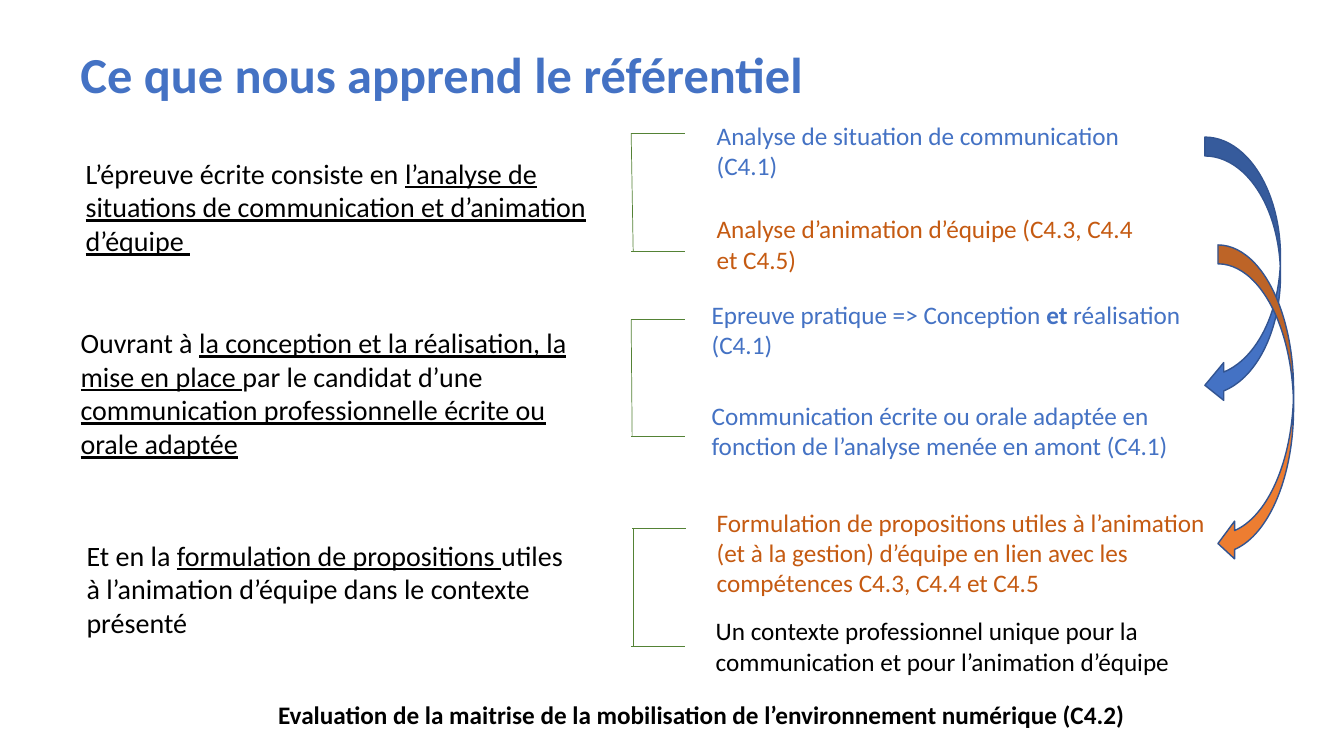
from lxml import etree
from pptx import Presentation
from pptx.dml.color import RGBColor
from pptx.enum.shapes import MSO_CONNECTOR, MSO_SHAPE
from pptx.enum.text import MSO_ANCHOR, MSO_AUTO_SIZE
from pptx.oxml.ns import qn
from pptx.util import Inches, Pt

STRAIGHT = MSO_CONNECTOR.STRAIGHT
CURVED = MSO_SHAPE.CURVED_LEFT_ARROW
MIDDLE, TOP = MSO_ANCHOR.MIDDLE, MSO_ANCHOR.TOP
GROW = MSO_AUTO_SIZE.SHAPE_TO_FIT_TEXT
NO_FIT = MSO_AUTO_SIZE.NONE
BLUE, RUST, ORANGE = "4472C4", "C55A11", "ED7D31"
GREEN, NAVY, BLACK = "548235", "325491", "000000"


def color(code):
    return RGBColor.from_string(code)


def add_text(text, box, size=18, ink=BLACK, bold=False, mark="underline",
             anchor=TOP, fit=GROW, spacing=1.0):
    frame = slide.shapes.add_textbox(*map(Inches, box)).text_frame
    frame.word_wrap = True
    frame.auto_size = fit
    frame.vertical_anchor = anchor
    para = frame.paragraphs[0]
    para.line_spacing = spacing
    for i, part in enumerate(text.split("|")):
        if part:
            run = para.add_run()
            run.text = part
            run.font.name = "Calibri"
            run.font.size = Pt(size)
            run.font.color.rgb = color(ink)
            run.font.bold = bold
            if i % 2:
                setattr(run.font, mark, True)


prs = Presentation()
prs.slide_width, prs.slide_height = Inches(13.33), Inches(7.5)
slide = prs.slides.add_slide(prs.slide_layouts[6])

add_text("Ce que nous apprend le référentiel", (0.7, 0.4, 11.66, 0.74),
         size=36, ink=BLUE, bold=True, anchor=MIDDLE, fit=NO_FIT, spacing=0.9)

stages = [
    ("L’épreuve écrite consiste en |l’analyse de situations de "
     "communication et d’animation d’équipe |", (0.75, 1.5, 5.29, 1.11)),
    ("Ouvrant à |la conception et la réalisation, la mise en place |par le "
     "candidat d’une |communication professionnelle écrite ou orale adaptée|",
     (0.7, 3.18, 5.29, 1.45)),
    ("Et en la |formulation de propositions |utiles à l’animation d’équipe "
     "dans le contexte présenté", (0.76, 5.29, 5.08, 1.41)),
]
for text, box in stages:
    add_text(text, box, size=20)

details = [
    ("Analyse de situation de communication (C4.1)",
     (7.01, 1.14, 4.58, 0.71), BLUE),
    ("Analyse d’animation d’équipe (C4.3, C4.4 et C4.5)",
     (7.01, 2.07, 4.57, 0.71), RUST),
    ("Epreuve pratique => Conception |et| réalisation (C4.1)",
     (6.96, 2.92, 5.12, 0.71), BLUE),
    ("Communication écrite ou orale adaptée en fonction de l’analyse menée "
     "en amont (C4.1)", (6.96, 3.92, 5.34, 0.71), BLUE),
    ("Formulation de propositions utiles à l’animation (et à la gestion) "
     "d’équipe en lien avec les compétences C4.3, C4.4 et C4.5",
     (7.01, 4.98, 5.06, 1.01), RUST),
    ("Un contexte professionnel unique pour la communication et pour "
     "l’animation d’équipe", (7, 6.06, 5.19, 0.71), BLACK),
]
for text, box, ink in details:
    add_text(text, box, ink=ink, mark="bold")

add_text("Evaluation de la maitrise de la mobilisation de l’environnement "
         "numérique (C4.2)", (2.66, 6.89, 8.61, 0.4), bold=True)

brackets = [
    (6.26, 6.28, 6.26, 6.26, 1.32, 2.49),
    (6.26, 6.27, 6.26, 6.26, 3.17, 4.33),
    (6.28, 6.28, 6.27, 6.26, 5.24, 6.41),
]
for head, foot, upper, lower, top, base in brackets:
    for ends in [(head, top, foot, base),
                 (upper, top, upper + 0.53, top),
                 (lower, base, lower + 0.53, base)]:
        line = slide.shapes.add_connector(STRAIGHT, *map(Inches, ends))
        line.line.color.rgb = color(GREEN)
        line.line.width = Pt(0.5)
        etree.SubElement(line._element.spPr, qn("a:effectLst"))

arrows = [
    ((11.95, 1.36, 0.75, 2.65), BLUE, 0.25),
    ((12.08, 2.43, 0.75, 3.15), ORANGE, 0.22),
]
for box, fill, tip in arrows:
    arrow = slide.shapes.add_shape(CURVED, *map(Inches, box))
    arrow.shadow.inherit = False
    arrow.adjustments[2] = tip
    arrow.fill.solid()
    arrow.fill.fore_color.rgb = color(fill)
    arrow.line.color.rgb = color(NAVY)
    arrow.line.width = Pt(1)

prs.save("out.pptx")
